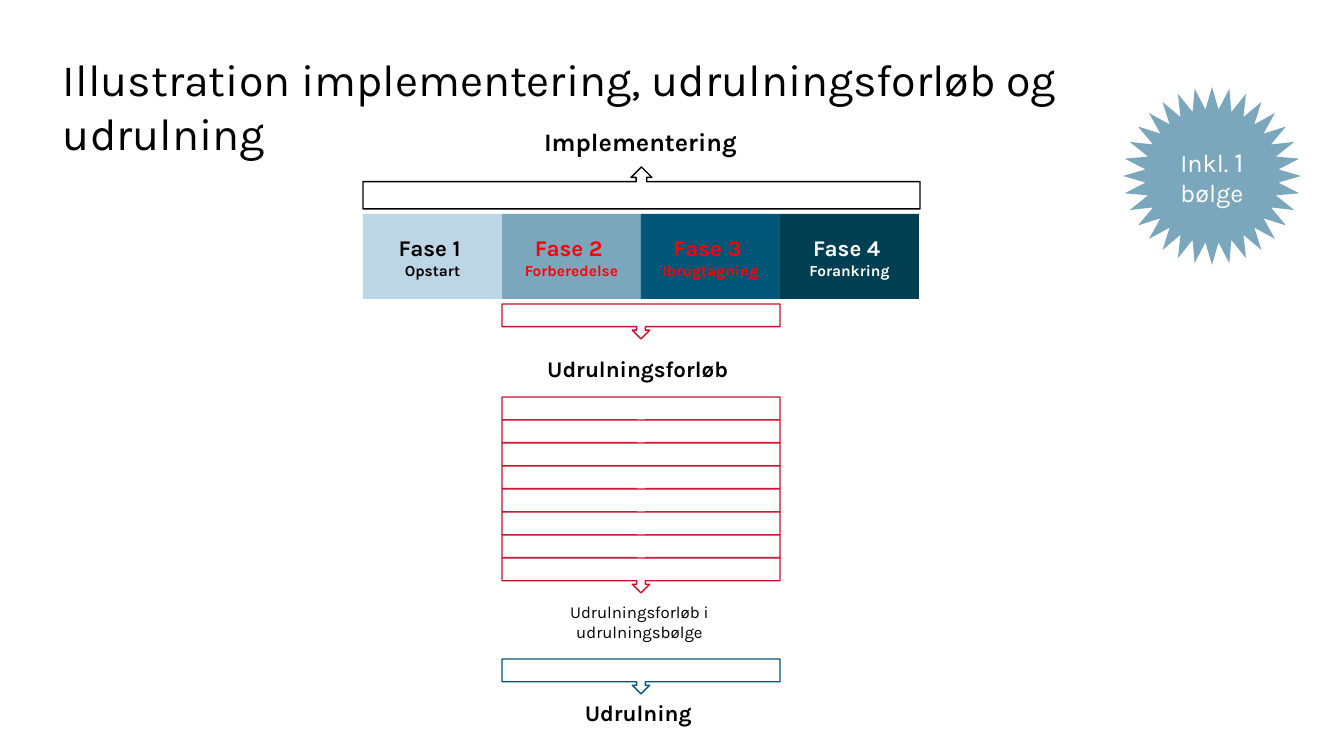
"""Build the slide on implementation phases, rollout courses and rollout."""
from dataclasses import dataclass

from pptx import Presentation
from pptx.dml.color import RGBColor
from pptx.enum.shapes import MSO_SHAPE
from pptx.enum.text import MSO_ANCHOR, PP_ALIGN
from pptx.util import Emu, Pt

BLACK = RGBColor(0x00, 0x00, 0x00)
WHITE = RGBColor(0xFF, 0xFF, 0xFF)
TEXT_RED = RGBColor(0xFF, 0x00, 0x00)
CRIMSON = RGBColor(0xC8, 0x10, 0x2E)
PALE_BLUE = RGBColor(0xBD, 0xD6, 0xE6)
MID_BLUE = RGBColor(0x7B, 0xA7, 0xBC)
OCEAN = RGBColor(0x00, 0x56, 0x76)
ROLLOUT_BLUE = RGBColor(0x00, 0x57, 0x76)
DEEP_BLUE = RGBColor(0x00, 0x3E, 0x51)

RECT = MSO_SHAPE.RECTANGLE
STAR = MSO_SHAPE.STAR_32_POINT
UP = MSO_SHAPE.UP_ARROW_CALLOUT
DOWN = MSO_SHAPE.DOWN_ARROW_CALLOUT
LEFT, CENTER = PP_ALIGN.LEFT, PP_ALIGN.CENTER
MIDDLE = MSO_ANCHOR.MIDDLE

FONT = "Karla"
EMU_PER_PX = 914400 / 100.8
PHASE_LEFT, PHASE_TOP, PHASE_STEP = 363, 214, 139
COURSE_LEFT, COURSE_WIDTH, COURSE_HEIGHT = 502, 278, 35
STACK_TOP, STACK_STEP, STACK_COUNT = 397, 23, 8


@dataclass(frozen=True)
class Box:
    """Position and size in px."""
    left: int
    top: int
    width: int
    height: int


@dataclass(frozen=True)
class Phase:
    """One phase of the implementation."""
    name: str
    task: str
    fill: RGBColor
    color: RGBColor


@dataclass(frozen=True)
class Callout:
    """An outlined bracket with an arrow."""
    kind: MSO_SHAPE
    box: Box
    line: RGBColor


@dataclass(frozen=True)
class Label:
    """A text box of equally formatted lines."""
    lines: tuple[str, ...]
    box: Box
    size: int
    bold: bool = False
    align: PP_ALIGN = CENTER


PHASES = (
    Phase("Fase 1 ", "Opstart", PALE_BLUE, BLACK),
    Phase("Fase 2 ", "Forberedelse", MID_BLUE, TEXT_RED),
    Phase("Fase 3 ", "Ibrugtagning", OCEAN, TEXT_RED),
    Phase("Fase 4 ", "Forankring", DEEP_BLUE, WHITE),
)


def course_box(top: int) -> Box:
    """Return the box of a bracket below phases 2 and 3."""
    return Box(COURSE_LEFT, top, COURSE_WIDTH, COURSE_HEIGHT)


CALLOUTS = (
    Callout(UP, Box(363, 167, 557, 42), BLACK),
    Callout(DOWN, course_box(304), CRIMSON),
    *(Callout(DOWN, course_box(STACK_TOP + i * STACK_STEP), CRIMSON)
      for i in range(STACK_COUNT)),
    Callout(DOWN, course_box(659), ROLLOUT_BLUE),
)

LABELS = (
    Label(("Illustration implementering, udrulningsforløb og udrulning",),
          Box(53, 47, 1209, 65), 32, align=LEFT),
    Label(("Implementering",), Box(507, 121, 267, 40), 18, bold=True),
    Label(("Udrulningsforløb ",), Box(507, 350, 267, 40), 16, bold=True),
    Label(("Udrulningsforløb i ", "udrulningsbølge "),
          Box(508, 597, 267, 50), 12),
    Label(("Udrulning ",), Box(502, 694, 278, 37), 16, bold=True),
)


def place(box: Box) -> tuple[Emu, ...]:
    """Turn a box in px into EMU lengths."""
    sides = (box.left, box.top, box.width, box.height)
    return tuple(Emu(round(side * EMU_PER_PX)) for side in sides)


def add_run(p, text: str, *, size: int, color: RGBColor = BLACK,
            bold: bool = False, align: PP_ALIGN = CENTER) -> None:
    """Append a formatted run to a paragraph."""
    p.alignment = align
    r = p.add_run()
    r.text = text
    r.font.name = FONT
    r.font.size = Pt(size)
    r.font.bold = bold
    r.font.color.rgb = color


def add_figure(slide, kind: MSO_SHAPE, box: Box, fill: RGBColor,
               line: RGBColor | None = None):
    """Add a flat preset shape, outlined only when a line colour is given."""
    sp = slide.shapes.add_shape(kind, *place(box))
    sp.shadow.inherit = False
    sp.fill.solid()
    sp.fill.fore_color.rgb = fill
    if line is None:
        sp.line.fill.background()
    else:
        sp.line.color.rgb = line
        sp.line.width = Pt(1)
    sp.text_frame.word_wrap = True
    sp.text_frame.vertical_anchor = MIDDLE
    return sp


def add_label(slide, label: Label) -> None:
    """Add a text box with one paragraph per line."""
    tf = slide.shapes.add_textbox(*place(label.box)).text_frame
    tf.word_wrap = True
    for i, line in enumerate(label.lines):
        p = tf.add_paragraph() if i else tf.paragraphs[0]
        add_run(p, line, size=label.size, bold=label.bold, align=label.align)


def add_phase(slide, index: int, phase: Phase) -> None:
    """Add a phase block with its name and task."""
    box = Box(PHASE_LEFT + index * PHASE_STEP, PHASE_TOP, PHASE_STEP, 85)
    tf = add_figure(slide, RECT, box, phase.fill).text_frame
    add_run(tf.paragraphs[0], phase.name, size=16, color=phase.color, bold=True)
    add_run(tf.add_paragraph(), phase.task, size=11, color=phase.color, bold=True)


def add_badge(slide) -> None:
    """Add the star that states the included wave."""
    sp = add_figure(slide, STAR, Box(1123, 87, 178, 178), MID_BLUE)
    p = sp.text_frame.paragraphs[0]
    for text, size in (("Inkl. ", 18), ("1", 20), (" bølge", 18)):
        add_run(p, text, size=size, color=WHITE)


def main() -> None:
    """Build and save the presentation."""
    prs = Presentation()
    _, _, prs.slide_width, prs.slide_height = place(Box(0, 0, 1344, 756))
    slide = prs.slides.add_slide(prs.slide_layouts[6])
    add_badge(slide)
    for callout in CALLOUTS:
        add_figure(slide, callout.kind, callout.box, WHITE, callout.line)
    for label in LABELS:
        add_label(slide, label)
    for i, phase in enumerate(PHASES):
        add_phase(slide, i, phase)
    prs.save("out.pptx")


if __name__ == "__main__":
    main()
